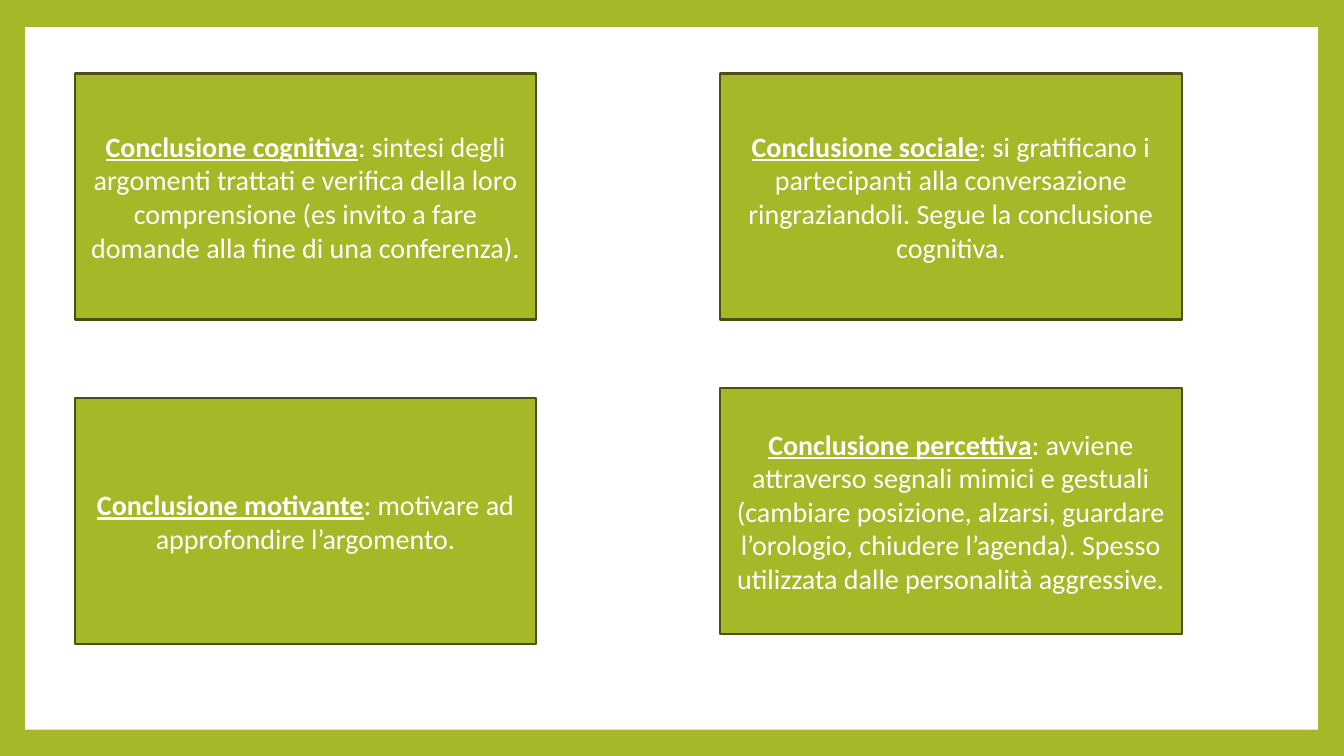
from pptx import Presentation
from pptx.dml.color import RGBColor
from pptx.enum.shapes import MSO_SHAPE
from pptx.enum.text import MSO_ANCHOR, PP_ALIGN
from pptx.util import Inches, Pt

COLOURS = {"green": "A6B727", "outline": "495011", "white": "FFFFFF"}
CARD_WIDTH, CARD_HEIGHT = 4.58, 2.44
LEFT_COLUMN, RIGHT_COLUMN = 0.74, 7.14
TOP_ROW = 0.73

CONCLUSIONS = [
    (LEFT_COLUMN, TOP_ROW, "Conclusione cognitiva",
     ": sintesi degli argomenti trattati e verifica della loro comprensione "
     "(es invito a fare domande alla fine di una conferenza)."),
    (RIGHT_COLUMN, TOP_ROW, "Conclusione sociale",
     ": si gratificano i partecipanti alla conversazione ringraziandoli. "
     "Segue la conclusione cognitiva."),
    (LEFT_COLUMN, 3.95, "Conclusione motivante",
     ": motivare ad approfondire l’argomento."),
    (RIGHT_COLUMN, 3.85, "Conclusione percettiva",
     ": avviene attraverso segnali mimici e gestuali (cambiare posizione, "
     "alzarsi, guardare l’orologio, chiudere l’agenda). Spesso utilizzata "
     "dalle personalità aggressive."),
]


def colour(name):
    return RGBColor.from_string(COLOURS[name])


def fill_background(page, name):
    fill = page.background.fill
    fill.solid()
    fill.fore_color.rgb = colour(name)


def add_rectangle(page, left, top, width, height, fill, outline=None):
    box = page.shapes.add_shape(
        MSO_SHAPE.RECTANGLE,
        Inches(left), Inches(top), Inches(width), Inches(height))
    box.shadow.inherit = False
    box.fill.solid()
    box.fill.fore_color.rgb = colour(fill)
    if outline:
        box.line.color.rgb = colour(outline)
        box.line.width = Pt(1.5)
    else:
        box.line.fill.background()
    return box


def add_text(para, text, size=20, name="Calibri", ink="white",
             bold=False, underline=False):
    span = para.add_run()
    span.text = text
    span.font.size = Pt(size)
    span.font.name = name
    span.font.color.rgb = colour(ink)
    span.font.bold = bold
    span.font.underline = underline


def add_card(page, left, top, term, explanation):
    box = add_rectangle(page, left, top, CARD_WIDTH, CARD_HEIGHT,
                        "green", "outline")
    frame = box.text_frame
    frame.word_wrap = True
    frame.vertical_anchor = MSO_ANCHOR.MIDDLE
    para = frame.paragraphs[0]
    para.alignment = PP_ALIGN.CENTER
    add_text(para, term, bold=True, underline=True)
    add_text(para, explanation)


def main():
    deck = Presentation()
    deck.slide_width = Inches(13.33)
    deck.slide_height = Inches(7.5)
    page = deck.slides.add_slide(deck.slide_layouts[6])
    fill_background(page, "green")
    add_rectangle(page, 0.25, 0.27, 12.82, 6.97, "white")
    for left, top, term, explanation in CONCLUSIONS:
        add_card(page, left, top, term, explanation)
    deck.save("out.pptx")


if __name__ == "__main__":
    main()
